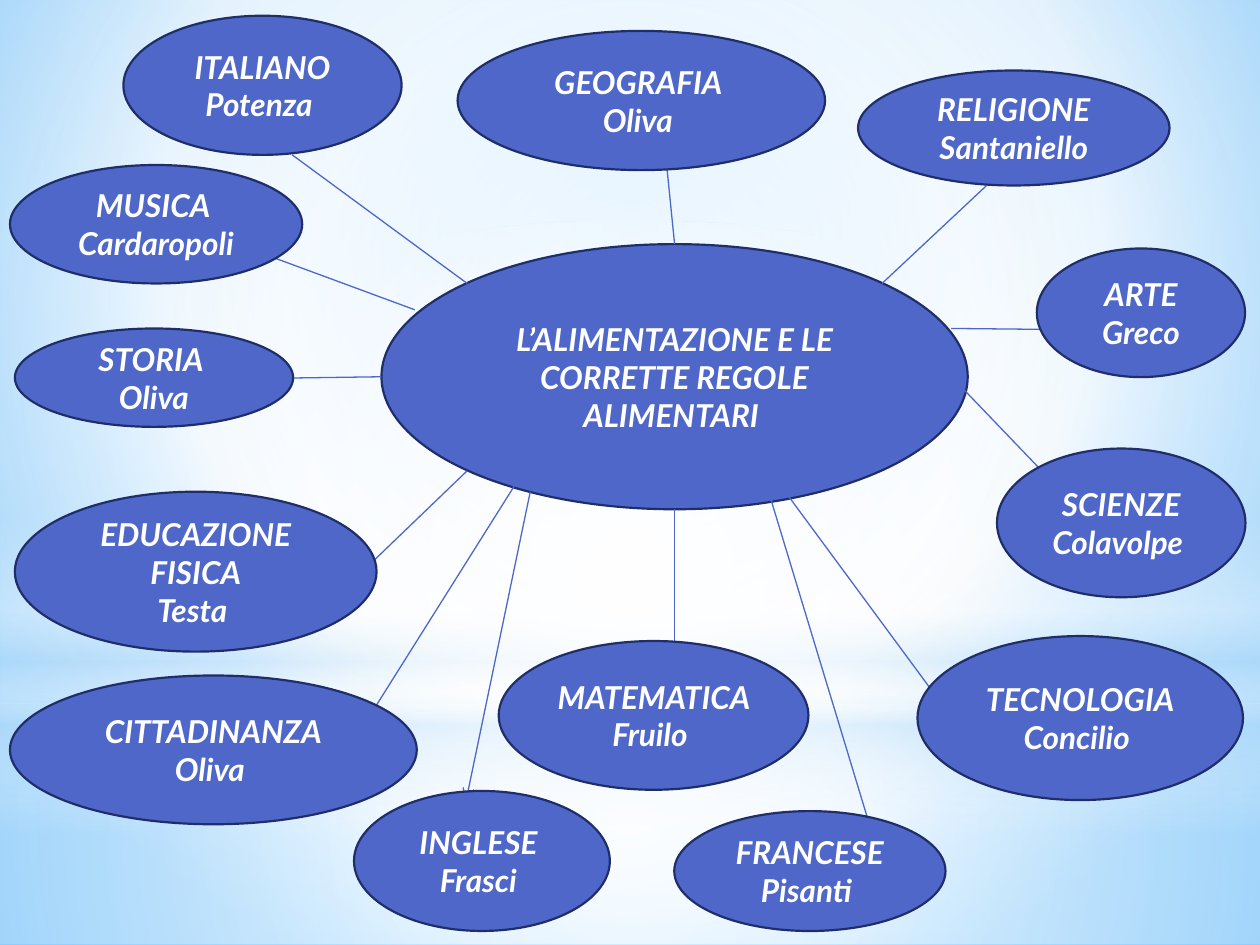
from lxml.etree import SubElement
from pptx import Presentation
from pptx.dml.color import RGBColor
from pptx.enum.shapes import MSO_CONNECTOR, MSO_SHAPE
from pptx.enum.text import MSO_ANCHOR, PP_ALIGN
from pptx.oxml.ns import qn
from pptx.util import Pt

WIDTH, HEIGHT = 720, 540
CENTER = (50, 50, 50, 50)

# Gradient stops: position %, colour, opacity %
SKY = [(0, "9ED5FF", 100), (60, "FFFFFF", 100), (100, "5BB9FF", 100)]
GROUND_GLOW = [(0, "FFFFFF", 91), (37, "FFFFFF", 76), (100, "B4DCFA", 79)]
SKY_GLOW = [(0, "FFFFFF", 89), (48, "FFFFFF", 62), (100, "B4DCFA", 79)]
HORIZON = [(0, "FFFFFF", 0), (29, "FFFFFF", 30), (45, "B4DCFA", 40),
           (55, "FFFFFF", 26), (65, "B4DCFA", 60), (100, "FFFFFF", 0)]
SPOTLIGHT = [(0, "FFFFFF", 100), (56, "FFFFFF", 0)]

TOPIC = ["L’ALIMENTAZIONE E LE CORRETTE REGOLE ALIMENTARI "]
TOPIC_BOX = (218, 139.5, 335, 151.5)

# Paragraphs, box, line start at the topic, line end at the subject, arrow
SUBJECTS = [
    (["ITALIANO Potenza "], (70.5, 9, 159, 79.5), (267, 162), (167, 88.5), False),
    (["STORIA ", "Oliva"], (8.5, 187.7, 159, 56.2), (218, 215.3), (167, 216), False),
    (["EDUCAZIONE", "FISICA", "Testa "], (8.5, 281, 206.7, 91.4),
     (267, 269), (206.7, 327), False),
    (["GEOGRAFIA ", "Oliva "], (261.5, 17.7, 210, 79.5), (385.5, 139.5), (377, 55), False),
    (["MATEMATICA ", "Fruilo "], (285, 366.3, 177, 85), (385.5, 291), (385.5, 366.5), False),
    (["SCIENZE", "Colavolpe "], (569.7, 256.3, 142, 85), (541, 212.4), (601, 275), False),
    (["ARTE", "Greco"], (592.5, 142, 119, 73.5), (543.5, 187.7), (594.7, 188.2), False),
    (["CITTADINANZA", "Oliva "], (5.7, 386, 232.5, 85), (295, 276), (193.7, 437), True),
    (["RELIGIONE", "Santaniello"], (490.3, 40.3, 178, 65.7), (504, 162), (563.8, 106), False),
    (["MUSICA ", "Cardaropoli"], (5.7, 94.3, 167, 67.7), (237, 177), (134, 139), True),
    (["TECNOLOGIA", "Concilio "], (524.3, 363.5, 186, 93.7), (445, 276), (563.8, 437), True),
    (["INGLESE ", "Frasci "], (202.3, 452, 146.2, 80), (303, 281), (266.4, 457.2), True),
    (["FRANCESE", "Pisanti "], (385.3, 463.5, 155, 68.5), (439.2, 281), (503.3, 492.5), True),
]


def color(value):
    return RGBColor.from_string(value)


def points(values):
    return [Pt(value) for value in values]


def fill_gradient(fill, owner, stops, focus=None):
    """Radial around the focus insets (left, top, right, bottom), else top to bottom."""
    fill.gradient()
    gradient = next(owner.iter(qn("a:gradFill")))
    for child in list(gradient):
        gradient.remove(child)
    stop_list = SubElement(gradient, qn("a:gsLst"))
    for position, value, opacity in stops:
        stop = SubElement(stop_list, qn("a:gs"), pos=str(position * 1000))
        tint = SubElement(stop, qn("a:srgbClr"), val=value)
        if opacity < 100:
            SubElement(tint, qn("a:alpha"), val=str(opacity * 1000))
    if focus:
        radial = SubElement(gradient, qn("a:path"))
        radial.set("path", "circle")
        insets = {side: str(inset * 1000) for side, inset in zip("ltrb", focus)}
        SubElement(radial, qn("a:fillToRect"), **insets)
    else:
        SubElement(gradient, qn("a:lin"), ang="5400000", scaled="0")


class ConceptMap:
    BLUE, NAVY, WHITE = "4E67C8", "1F2E69", "FFFFFF"
    FONT = {"name": "Lato", "size": Pt(18), "bold": True, "italic": True}

    def __init__(self, slide):
        self.slide = slide

    def backdrop(self, stops, focus):
        fill_gradient(self.slide.background.fill, self.slide.element, stops, focus)

    def glow(self, outline, box, stops, focus=None):
        glow = self.slide.shapes.add_shape(outline, *points(box))
        glow.shadow.inherit = False
        glow.line.fill.background()
        fill_gradient(glow.fill, glow.element, stops, focus)

    def bubble(self, paragraphs, box):
        bubble = self.slide.shapes.add_shape(MSO_SHAPE.OVAL, *points(box))
        bubble.shadow.inherit = False
        bubble.fill.solid()
        bubble.fill.fore_color.rgb = color(self.BLUE)
        bubble.line.color.rgb = color(self.NAVY)
        bubble.line.width = Pt(1.25)
        frame = bubble.text_frame
        frame.word_wrap = True
        frame.vertical_anchor = MSO_ANCHOR.MIDDLE
        for index, text in enumerate(paragraphs):
            paragraph = frame.add_paragraph() if index else frame.paragraphs[0]
            paragraph.alignment = PP_ALIGN.CENTER
            run = paragraph.add_run()
            run.text = text
            for attribute, value in self.FONT.items():
                setattr(run.font, attribute, value)
            run.font.color.rgb = color(self.WHITE)

    def link(self, start, end, arrow):
        link = self.slide.shapes.add_connector(
            MSO_CONNECTOR.STRAIGHT, *points(start + end))
        link.line.color.rgb = color(self.BLUE)
        link.line.width = Pt(0.75)
        if arrow:
            SubElement(link.line._get_or_add_ln(), qn("a:tailEnd"), type="arrow")
        SubElement(link.element.spPr, qn("a:effectLst"))


def main():
    deck = Presentation()
    deck.slide_width, deck.slide_height = Pt(WIDTH), Pt(HEIGHT)
    concept_map = ConceptMap(deck.slides.add_slide(deck.slide_layouts[6]))

    concept_map.backdrop(SKY, (20, 10, 20, 60))
    ground = 402
    concept_map.glow(MSO_SHAPE.RECTANGLE, (0, ground, WIDTH, HEIGHT - ground),
                     GROUND_GLOW, CENTER)
    concept_map.glow(MSO_SHAPE.RECTANGLE, (0, 0, WIDTH, ground), SKY_GLOW, CENTER)
    concept_map.glow(MSO_SHAPE.RECTANGLE, (0, 297, WIDTH, 180), HORIZON)
    concept_map.glow(MSO_SHAPE.OVAL, (0, 126, WIDTH, ground), SPOTLIGHT, CENTER)

    concept_map.bubble(TOPIC, TOPIC_BOX)
    for _, _, start, end, arrow in SUBJECTS:
        concept_map.link(start, end, arrow)
    for paragraphs, box, *_ in SUBJECTS:
        concept_map.bubble(paragraphs, box)

    deck.save("out.pptx")


if __name__ == "__main__":
    main()
